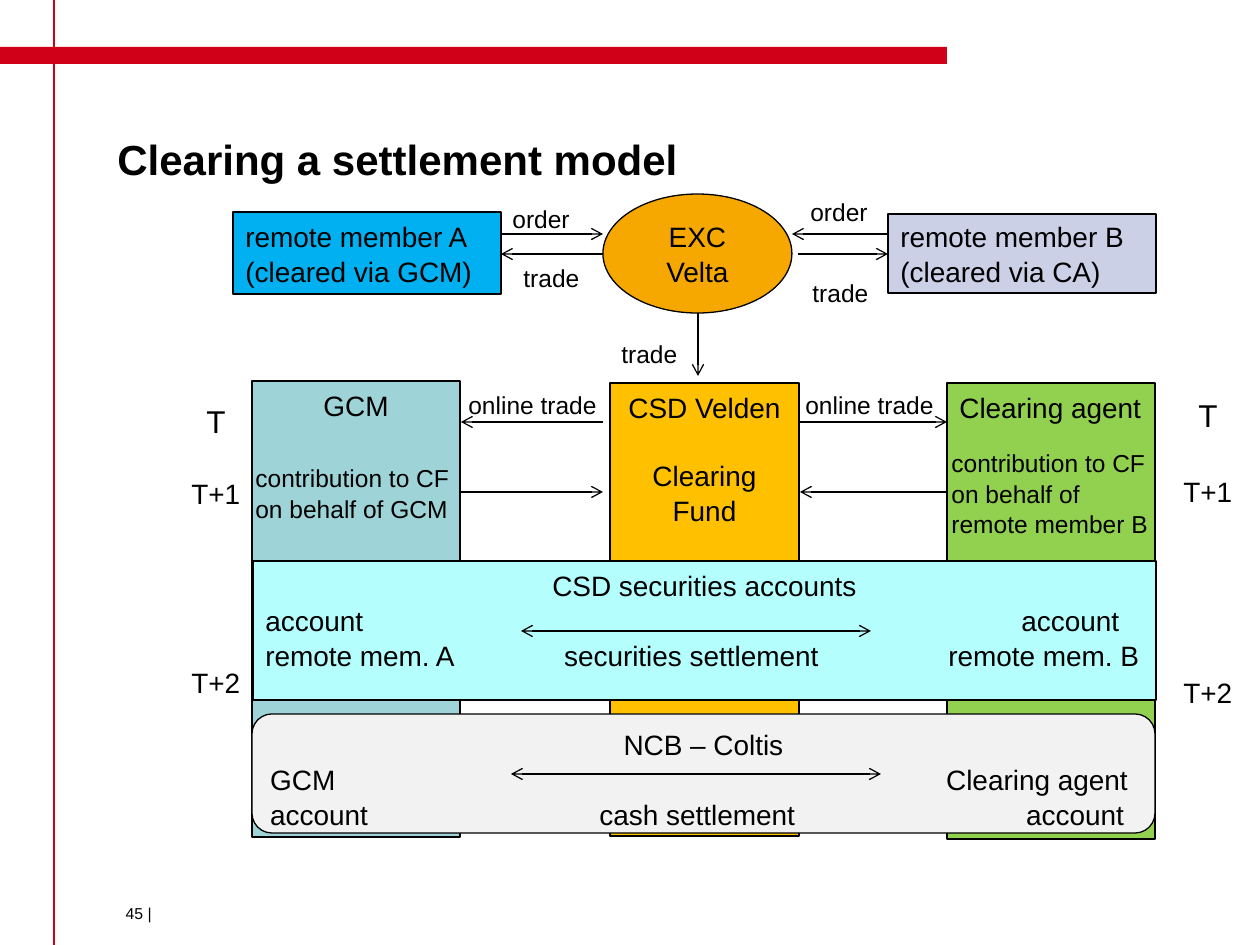
import pptx
import pptx.dml.color
import pptx.enum.shapes
import pptx.enum.text
import pptx.oxml
import pptx.oxml.ns
import pptx.util

PX = 914400 // 126
SHAPES = pptx.enum.shapes.MSO_SHAPE
ALIGN = pptx.enum.text.PP_ALIGN
ANCHOR = pptx.enum.text.MSO_ANCHOR
BLACK, RED = "000000", "D10019"


def rgb(value):
    return pptx.dml.color.RGBColor.from_string(value)


def add_child(parent, tag, **attributes):
    child = pptx.oxml.parse_xml(f"<{tag} {pptx.oxml.ns.nsdecls('a')}/>")
    for key, value in attributes.items():
        child.set(key, str(value))
    parent.append(child)
    return child


def write(frame, lines, size=16, bold=False, align=ALIGN.LEFT,
          anchor=ANCHOR.TOP, wrap=True, tabs=None, gaps=None):
    """Fill a frame; tabs and gaps (points before) are keyed by line index."""
    frame.word_wrap = wrap
    frame.vertical_anchor = anchor
    for index, line in enumerate(lines):
        paragraph = frame.paragraphs[0] if index == 0 else frame.add_paragraph()
        row_tabs = (tabs or {}).get(index)
        paragraph.alignment = ALIGN.LEFT if row_tabs else align
        paragraph.line_spacing = 1.04
        if gaps and index in gaps:
            paragraph.space_before = pptx.util.Pt(gaps[index])
        if row_tabs:
            stops = add_child(paragraph._p.get_or_add_pPr(), "a:tabLst")
            for position, kind in row_tabs:
                add_child(stops, "a:tab", pos=position * PX, algn=kind)
        run = paragraph.add_run()
        run.text = line
        run.font.name = "Arial"
        run.font.size = pptx.util.Pt(size)
        run.font.bold = bold
        run.font.color.rgb = rgb(BLACK)


class Diagram:
    def __init__(self, slide, line_width=0.75):
        self.slide = slide
        self.line_width = pptx.util.Pt(line_width)

    def box(self, left, top, width, height, fill, lines=(),
            kind=SHAPES.RECTANGLE, outline=BLACK, **style):
        shape = self.slide.shapes.add_shape(
            kind, left * PX, top * PX, width * PX, height * PX)
        shape.shadow.inherit = False
        shape.fill.solid()
        shape.fill.fore_color.rgb = rgb(fill)
        if outline:
            shape.line.color.rgb = rgb(outline)
            shape.line.width = self.line_width
        else:
            shape.line.fill.background()
        write(shape.text_frame, lines, **style)

    def label(self, left, top, width, height, *lines, **style):
        area = self.slide.shapes.add_textbox(
            left * PX, top * PX, width * PX, height * PX)
        write(area.text_frame, lines, **style)

    def line(self, x1, y1, x2, y2, color=BLACK, arrows=("tailEnd",)):
        connector = self.slide.shapes.add_connector(
            pptx.enum.shapes.MSO_CONNECTOR.STRAIGHT,
            x1 * PX, y1 * PX, x2 * PX, y2 * PX)
        connector.line.color.rgb = rgb(color)
        connector.line.width = self.line_width
        for end in arrows:
            add_child(connector.line._get_or_add_ln(), f"a:{end}", type="arrow")
        add_child(connector._element.spPr, "a:effectLst")


def draw_frame(diagram):
    diagram.box(-4, 47, 951, 17, RED, outline=None)
    diagram.line(54, 0, 54, 945, color=RED, arrows=())
    diagram.label(105, 897, 59, 43, "45 |", size=9, align=ALIGN.RIGHT)
    diagram.label(105, 125, 743, 106, "Clearing a settlement model",
                  size=24, bold=True)


def draw_trading(diagram):
    diagram.box(233, 212, 268, 82, "00B0F0",
                ["remote member A", "(cleared via GCM)"], anchor=ANCHOR.MIDDLE)
    diagram.box(888, 214, 268, 79, "CBD0E7",
                ["remote member B", "(cleared via CA)"], anchor=ANCHOR.MIDDLE)
    diagram.box(603, 194, 189, 119, "F6A800", ["EXC", "Velta"],
                kind=SHAPES.OVAL, align=ALIGN.CENTER, anchor=ANCHOR.MIDDLE)
    for start, end, y in ((501, 603, 234), (888, 792, 234),
                          (603, 501, 254), (798, 888, 254)):
        diagram.line(start, y, end, y)
    diagram.line(698, 313, 698, 376)
    for left, top, word in ((500, 197, "order"), (798, 190, "order"),
                            (511, 256, "trade"), (800, 271, "trade"),
                            (609, 332, "trade")):
        diagram.label(left, top, 83, 42, word, size=14, wrap=False)


def draw_clearing(diagram):
    diagram.box(610, 383, 189, 453, "FFC000", ["CSD Velden", "Clearing Fund"],
                align=ALIGN.CENTER, gaps={1: 19})
    diagram.box(252, 381, 208, 456, "9ED3D7", ["GCM"], align=ALIGN.CENTER)
    diagram.box(947, 383, 208, 456, "92D050", ["Clearing agent"])
    for start, end, y in ((603, 461, 422), (800, 947, 422),
                          (461, 603, 492), (947, 800, 492)):
        diagram.line(start, y, end, y)
    for left in (456, 793):
        diagram.label(left, 383, 154, 42, "online trade", size=14, wrap=False)
    diagram.label(243, 456, 258, 72, "contribution to CF", "on behalf of GCM",
                  size=14)
    diagram.label(939, 441, 224, 103, "contribution to CF",
                  "on behalf of remote member B", size=14)


def draw_settlement(diagram):
    diagram.box(253, 561, 903, 139, "B4FEFE",
                ["CSD securities accounts", "account\taccount",
                 "remote mem. A\tsecurities settlement\tremote mem. B"],
                align=ALIGN.CENTER,
                tabs={1: [(756, "l")], 2: [(426, "ctr"), (683, "l")]})
    diagram.box(252, 714, 903, 119, "F2F2F2",
                ["NCB – Coltis", "GCM\tClearing agent",
                 "account\tcash settlement\taccount"],
                kind=SHAPES.ROUNDED_RECTANGLE, align=ALIGN.CENTER,
                tabs={1: [(676, "l")], 2: [(427, "ctr"), (756, "l")]})
    for start, end, y in ((521, 871, 631), (511, 881, 774)):
        diagram.line(start, y, end, y, arrows=("headEnd", "tailEnd"))


def draw_days(diagram):
    for day, left_top, right_top in (("T+1", 469, 467), ("T+2", 658, 668)):
        diagram.label(179, left_top, 74, 47, day, wrap=False)
        diagram.label(1171, right_top, 74, 47, day, wrap=False)
    for left, top in ((194, 394), (1186, 388)):
        diagram.label(left, top, 45, 50, "T", size=18, wrap=False)


def main():
    deck = pptx.Presentation()
    deck.slide_width = pptx.util.Inches(10)
    deck.slide_height = pptx.util.Inches(7.5)
    diagram = Diagram(deck.slides.add_slide(deck.slide_layouts[6]))
    for draw in (draw_frame, draw_trading, draw_clearing,
                 draw_settlement, draw_days):
        draw(diagram)
    deck.save("out.pptx")


if __name__ == "__main__":
    main()
